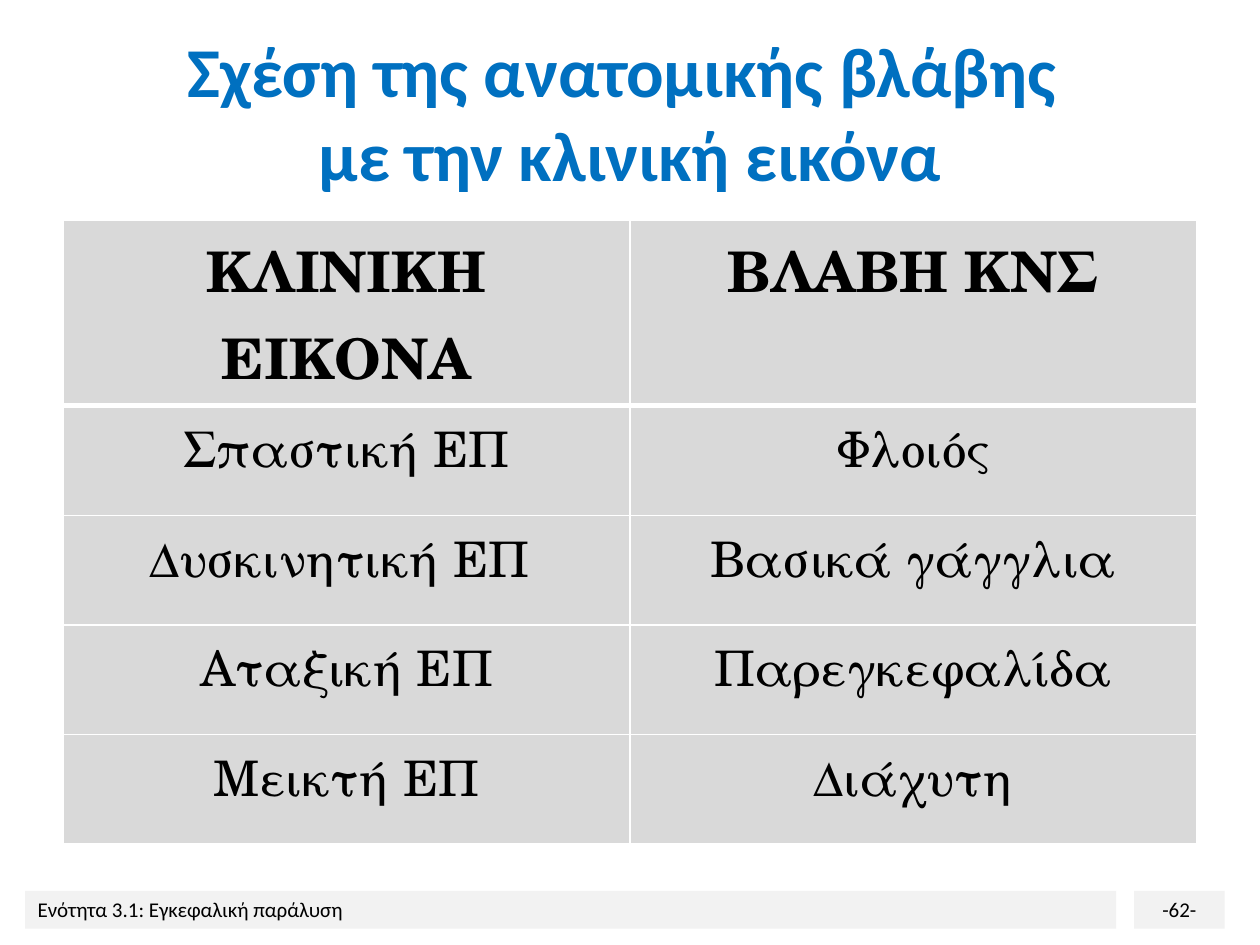
import pptx
import pptx.util
import pptx.dml.color
import pptx.enum.shapes
import pptx.enum.text
import pptx.oxml.ns
from lxml import etree
from pptx.util import Inches

COLORS = {
    "title": "0070C0",
    "text": "000000",
    "cell": "D9D9D9",
    "footer": "F2F2F2",
    "border": "FFFFFF",
}
TITLE_LINES = ["Σχέση της ανατομικής βλάβης ", "με την κλινική εικόνα"]
LESION_ROWS = [
    ("ΚΛΙΝΙΚΗ ΕΙΚΟΝΑ", "ΒΛΑΒΗ ΚΝΣ"),
    ("Σπαστική ΕΠ", "Φλοιός"),
    ("Δυσκινητική ΕΠ ", "Βασικά γάγγλια"),
    ("Αταξική ΕΠ", "Παρεγκεφαλίδα"),
    ("Μεικτή ΕΠ", "Διάχυτη"),
]
ALIGN = pptx.enum.text.PP_ALIGN


def rgb(name):
    return pptx.dml.color.RGBColor.from_string(COLORS[name])


def add_span(para, text, size, font="Calibri", color="text", bold=False):
    span = para.add_run()
    span.text = text
    span.font.size = pptx.util.Pt(size)
    span.font.name = font
    span.font.bold = bold
    span.font.color.rgb = rgb(color)


def add_title(slide):
    box = slide.shapes.add_textbox(Inches(0.5), Inches(0.3), Inches(9), Inches(1.17))
    frame = box.text_frame
    frame.word_wrap = True
    frame.vertical_anchor = pptx.enum.text.MSO_ANCHOR.MIDDLE
    para = frame.paragraphs[0]
    para.alignment = ALIGN.CENTER
    for index, line in enumerate(TITLE_LINES):
        if index:
            para.add_line_break()
        add_span(para, line, 40, color="title", bold=True)


def add_footer_bar(slide, left, width, text, alignment):
    bar = slide.shapes.add_shape(
        pptx.enum.shapes.MSO_SHAPE.RECTANGLE,
        Inches(left), Inches(7.07), Inches(width), Inches(0.3),
    )
    bar.shadow.inherit = False
    bar.fill.solid()
    bar.fill.fore_color.rgb = rgb("footer")
    bar.line.fill.background()
    frame = bar.text_frame
    frame.word_wrap = True
    frame.vertical_anchor = pptx.enum.text.MSO_ANCHOR.TOP
    para = frame.paragraphs[0]
    para.alignment = alignment
    add_span(para, text, 12)


def set_borders(cell, top, bottom):
    """Draw the four cell edges; top and bottom are widths in points."""
    properties = cell._tc.get_or_add_tcPr()
    edges = [("lnL", 1), ("lnR", 1), ("lnT", top), ("lnB", bottom)]
    for position, (tag, width) in enumerate(edges):
        line = etree.Element(pptx.oxml.ns.qn(f"a:{tag}"), w=str(pptx.util.Pt(width)))
        fill = etree.SubElement(line, pptx.oxml.ns.qn("a:solidFill"))
        etree.SubElement(fill, pptx.oxml.ns.qn("a:srgbClr"), val=COLORS["border"])
        properties.insert(position, line)


def fill_cell(cell, text, row):
    header = row == 0
    cell.fill.solid()
    cell.fill.fore_color.rgb = rgb("cell")
    para = cell.text_frame.paragraphs[0]
    para.alignment = ALIGN.CENTER
    add_span(para, text, 32 if header else 28, "TeX Gyre Schola", bold=header)
    set_borders(cell, top=3 if row == 1 else 1, bottom=3 if header else 1)


def add_lesion_table(slide):
    heights = [Inches(1.47)] + [Inches(0.87)] * (len(LESION_ROWS) - 1)
    table = slide.shapes.add_table(
        len(LESION_ROWS), 2, Inches(0.5), Inches(1.75), Inches(9), sum(heights),
    ).table
    for row, (texts, height) in enumerate(zip(LESION_ROWS, heights)):
        table.rows[row].height = height
        for column, text in enumerate(texts):
            fill_cell(table.cell(row, column), text, row)


def main():
    deck = pptx.Presentation()
    deck.slide_width, deck.slide_height = Inches(10), Inches(7.5)
    slide = deck.slides.add_slide(deck.slide_layouts[6])
    add_footer_bar(slide, 0.2, 8.66, "Ενότητα 3.1: Εγκεφαλική παράλυση", ALIGN.LEFT)
    add_footer_bar(slide, 9, 0.72, "-62-", ALIGN.CENTER)
    add_title(slide)
    add_lesion_table(slide)
    deck.save("out.pptx")


if __name__ == "__main__":
    main()
